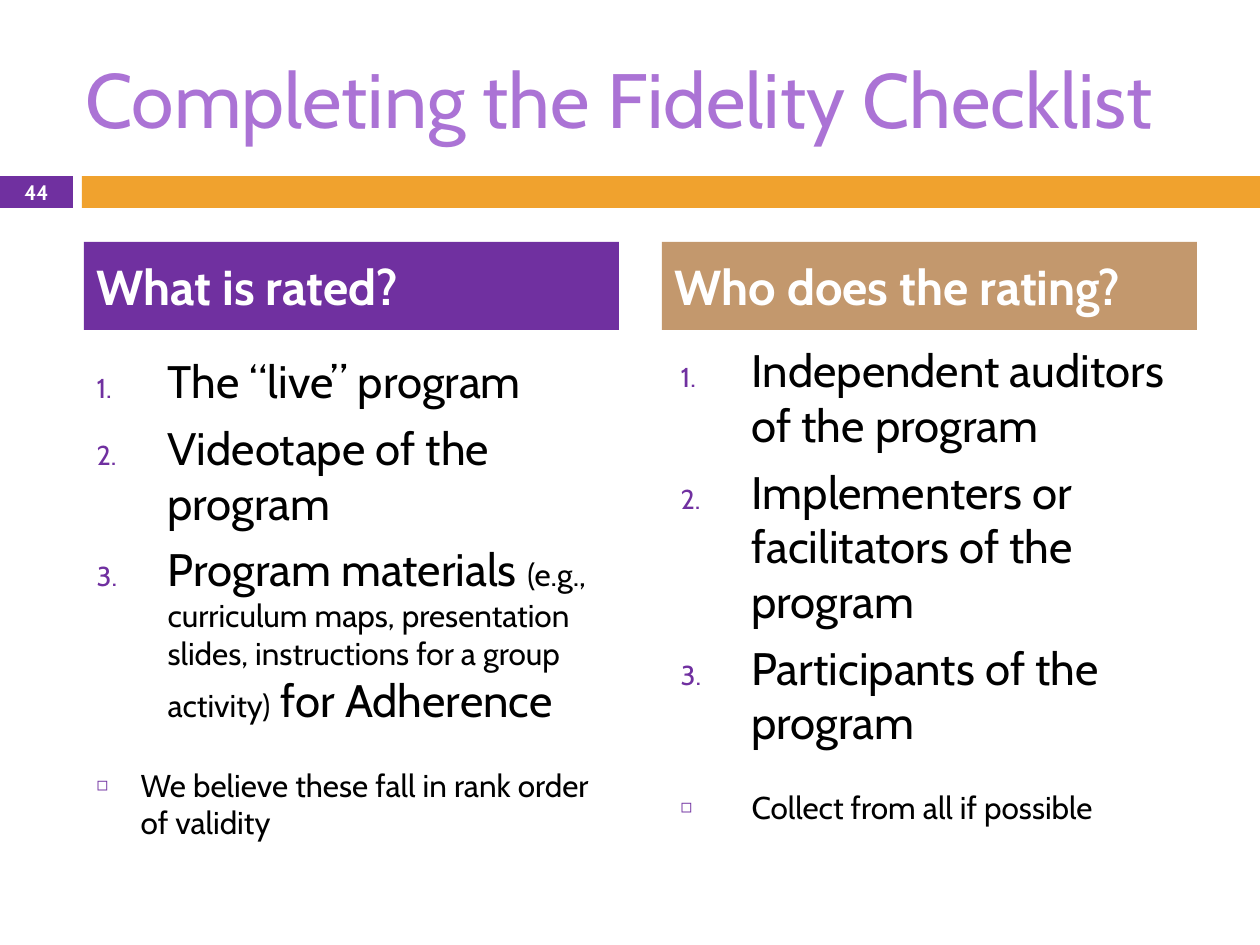
from lxml import etree
from pptx import Presentation
from pptx import util as u
from pptx.dml.color import RGBColor
from pptx.enum import shapes, text
from pptx.oxml.ns import qn

FONT = "Cabin"
COLORS = {
    "lavender": "AB73D5",
    "purple": "7030A0",
    "orange": "F0A22E",
    "tan": "C3986D",
    "black": "000000",
    "white": "FFFFFF",
}
COLUMN_WIDTH = 535
LARGE, SMALL = 26, 18
RATED = [
    [("The “live” program", LARGE)],
    [("Videotape of the program", LARGE)],
    [
        ("Program materials ", LARGE),
        ("(e.g., curriculum maps, presentation slides, instructions for a group activity)", SMALL),
        (" for Adherence", LARGE),
    ],
]
RATERS = [
    [("Independent auditors of the program", LARGE)],
    [("Implementers or facilitators of the program", LARGE)],
    [("Participants of the program", LARGE)],
]


def px(length):
    return u.Emu(round(length * 914400 / 126))


def color(name):
    return RGBColor.from_string(COLORS[name])


def place(element, left, top, width, height):
    element.left, element.top = px(left), px(top)
    element.width, element.height = px(width), px(height)


def style(run, size, shade, bold=False):
    run.font.name = FONT
    run.font.size = u.Pt(size)
    run.font.bold = bold
    run.font.color.rgb = color(shade)


def add_bar(slide, left, top, width, height, shade):
    bar = slide.shapes.add_shape(
        shapes.MSO_SHAPE.RECTANGLE, px(left), px(top), px(width), px(height)
    )
    bar.shadow.inherit = False
    bar.fill.solid()
    bar.fill.fore_color.rgb = color(shade)
    bar.line.fill.background()


def write_line(element, words, size, shade, bold=False, align=text.PP_ALIGN.LEFT):
    frame = element.text_frame
    frame.text = words
    frame.word_wrap = True
    frame.auto_size = text.MSO_AUTO_SIZE.NONE
    frame.vertical_anchor = text.MSO_ANCHOR.MIDDLE
    line = frame.paragraphs[0]
    line.alignment = align
    style(line.runs[0], size, shade, bold)
    return line


def fill_heading(heading, left, words, shade):
    place(heading, left, 242, COLUMN_WIDTH, 88)
    heading.fill.solid()
    heading.fill.fore_color.rgb = color(shade)
    write_line(heading, words, 28, "white", True).space_before = u.Pt(7)


def set_bullet(item, margin, hanging, kind, **marker):
    properties = item._p.get_or_add_pPr()
    properties.set("marL", str(px(margin)))
    properties.set("indent", str(-px(hanging)))
    bullet_color = etree.SubElement(properties, qn("a:buClr"))
    etree.SubElement(bullet_color, qn("a:srgbClr"), val=COLORS["purple"])
    etree.SubElement(properties, qn("a:buSzPct"), val="60000")
    etree.SubElement(properties, qn("a:buFont"), typeface=FONT)
    etree.SubElement(properties, qn(kind), **marker)


def add_item(item, parts, gap):
    item.space_before = u.Pt(gap)
    for words, size in parts:
        run = item.add_run()
        run.text = words
        style(run, size, "black")


def fill_list(body, box, items, note, margin, note_margin, note_hanging):
    place(body, *box)
    frame = body.text_frame
    frame.auto_size = text.MSO_AUTO_SIZE.NONE
    for index, parts in enumerate(items):
        item = frame.add_paragraph() if index else frame.paragraphs[0]
        add_item(item, parts, 7)
        set_bullet(item, margin, 71, "a:buAutoNum", type="arabicPeriod")
    closing = frame.add_paragraph()
    add_item(closing, [(note, SMALL)], 22.5)
    set_bullet(closing, note_margin, note_hanging, "a:buChar", char="◻")


def main():
    deck = Presentation()
    deck.slide_width, deck.slide_height = px(1260), px(945)
    slide = deck.slides.add_slide(deck.slide_layouts.get_by_name("Comparison"))
    title, rated_heading, rated, raters_heading, raters = slide.placeholders

    place(title, 73, 38, 1124, 120)
    write_line(title, "Completing the Fidelity Checklist", 44, "lavender")

    add_bar(slide, 0, 176, 73, 32, "purple")
    add_bar(slide, 82, 176, 1178, 32, "orange")
    number = slide.shapes.add_textbox(px(0), px(175), px(73), px(34))
    write_line(number, "44", 12, "white", True, text.PP_ALIGN.CENTER)

    fill_heading(rated_heading, 84, "What is rated?", "purple")
    fill_heading(raters_heading, 662, "Who does the rating?", "tan")
    fill_list(rated, (84, 347, COLUMN_WIDTH, 567), RATED,
              "We believe these fall in rank order of validity", 71, 44, 44)
    fill_list(raters, (662, 336, COLUMN_WIDTH, 588), RATERS,
              "Collect from all if possible", 77, 77, 71)

    deck.save("out.pptx")


if __name__ == "__main__":
    main()
